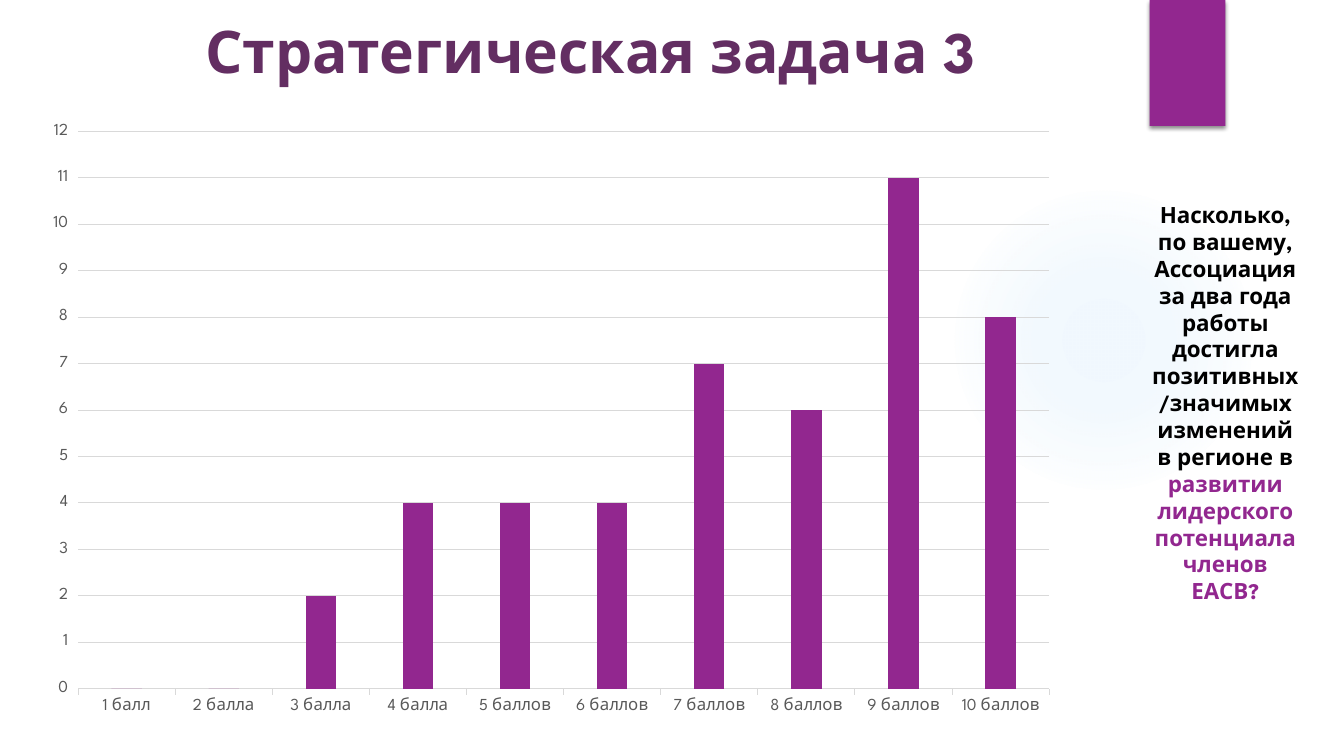
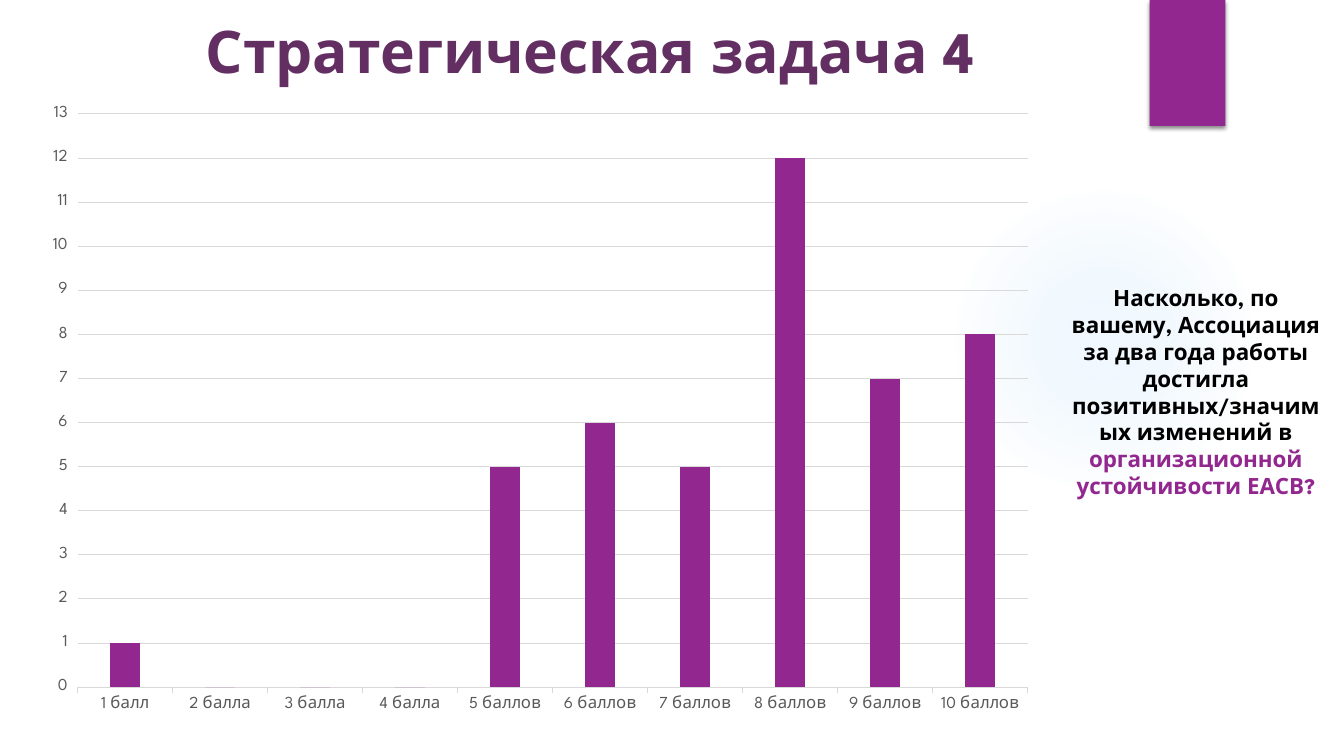
from dataclasses import dataclass

from lxml import etree
from pptx import Presentation
from pptx.chart.data import CategoryChartData
from pptx.dml.color import RGBColor
from pptx.enum.chart import XL_CHART_TYPE, XL_TICK_MARK
from pptx.enum.shapes import MSO_SHAPE
from pptx.enum.text import MSO_ANCHOR, MSO_AUTO_SIZE, PP_ALIGN
from pptx.oxml import parse_xml
from pptx.oxml.ns import nsdecls, qn
from pptx.util import Emu, Pt

COLUMNS = XL_CHART_TYPE.COLUMN_CLUSTERED
TICK_OUTSIDE = XL_TICK_MARK.OUTSIDE
TICK_NONE = XL_TICK_MARK.NONE
ELLIPSE = MSO_SHAPE.OVAL
RECTANGLE = MSO_SHAPE.RECTANGLE
MIDDLE = MSO_ANCHOR.MIDDLE
TOP = MSO_ANCHOR.TOP
FIT_TEXT = MSO_AUTO_SIZE.SHAPE_TO_FIT_TEXT
FIXED = MSO_AUTO_SIZE.NONE
CENTER = PP_ALIGN.CENTER

EMU_PER_PX = 9525


@dataclass(frozen=True)
class Theme:
    font: str = "League Spartan"
    accent: str = "92278F"
    title: str = "632E62"
    text: str = "000000"
    axis_text: str = "595959"
    grid: str = "D9D9D9"
    glow: str = "45A5ED"
    shadow: str = "000000"
    title_size: int = 42
    question_size: int = 16
    chart_size: int = 10
    axis_size: int = 12
    line_width: float = 0.75


@dataclass(frozen=True)
class Area:
    left: int
    top: int
    width: int
    height: int

    def emu(self) -> tuple[Emu, ...]:
        return tuple(
            Emu(length * EMU_PER_PX)
            for length in (self.left, self.top, self.width, self.height)
        )


@dataclass(frozen=True)
class Span:
    text: str
    color: str


@dataclass(frozen=True)
class SurveyPage:
    title: str
    question: str
    focus: str
    scores: tuple[int, ...]
    axis_maximum: int
    chart_area: Area
    question_area: Area


THEME = Theme()
PAGE_AREA = Area(0, 0, 1280, 720)
GLOW_AREA = Area(903, 176, 296, 296)
TAB_AREA = Area(1095, 0, 72, 120)
TITLE_AREA = Area(68, 7, 988, 82)
GLOW_STOPS = ((0, 7), (36, 6), (69, 0))

PAGES = (
    SurveyPage(
        title="Стратегическая задача 3",
        question="Насколько, по вашему, Ассоциация за два года работы достигла "
        "позитивных/значимых изменений в регионе в ",
        focus="развитии лидерского потенциала членов ЕАСВ?",
        scores=(0, 0, 2, 4, 4, 4, 7, 6, 11, 8),
        axis_maximum=12,
        chart_area=Area(31, 106, 988, 586),
        question_area=Area(1085, 187, 164, 397),
    ),
    SurveyPage(
        title="Стратегическая задача 4",
        question="Насколько, по вашему, Ассоциация за два года работы достигла "
        "позитивных/значимых изменений в ",
        focus="организационной устойчивости ЕАСВ?",
        scores=(1, 0, 0, 0, 5, 6, 5, 12, 7, 8),
        axis_maximum=13,
        chart_area=Area(31, 89, 967, 602),
        question_area=Area(1008, 266, 262, 217),
    ),
)


def rgb(color: str) -> RGBColor:
    return RGBColor.from_string(color)


def score_label(score: int) -> str:
    if score == 1:
        return "1 балл"
    return f"{score} балла" if score < 5 else f"{score} баллов"


def add_plain_shape(page, kind, area: Area, color: str):
    shape = page.shapes.add_shape(kind, *area.emu())
    shape.shadow.inherit = False
    shape.fill.solid()
    shape.fill.fore_color.rgb = rgb(color)
    shape.line.fill.background()
    return shape


def add_glow(page) -> None:
    shape = add_plain_shape(page, ELLIPSE, GLOW_AREA, THEME.glow)
    stops = "".join(
        f'<a:gs pos="{position * 1000}"><a:srgbClr val="{THEME.glow}">'
        f'<a:alpha val="{opacity * 1000}"/></a:srgbClr></a:gs>'
        for position, opacity in GLOW_STOPS
    )
    gradient = parse_xml(
        f'<a:gradFill {nsdecls("a")} rotWithShape="1"><a:gsLst>{stops}</a:gsLst>'
        '<a:path path="circle">'
        '<a:fillToRect l="50000" t="50000" r="50000" b="50000"/>'
        "</a:path></a:gradFill>"
    )
    properties = shape.element.spPr
    properties.replace(properties.find(qn("a:solidFill")), gradient)


def add_tab(page) -> None:
    shape = add_plain_shape(page, RECTANGLE, TAB_AREA, THEME.accent)
    effects = shape.element.spPr.find(qn("a:effectLst"))
    shadow = etree.SubElement(
        effects,
        qn("a:outerShdw"),
        blurRad=str(Pt(3)),
        dist=str(Pt(2)),
        dir="5400000",
        rotWithShape="0",
    )
    color = etree.SubElement(shadow, qn("a:srgbClr"), val=THEME.shadow)
    etree.SubElement(color, qn("a:alpha"), val="45000")


def add_text(page, area: Area, spans: tuple[Span, ...], size: int,
             anchor, auto_size) -> None:
    box = page.shapes.add_textbox(*area.emu())
    frame = box.text_frame
    frame.word_wrap = True
    frame.auto_size = auto_size
    frame.vertical_anchor = anchor
    paragraph = frame.paragraphs[0]
    paragraph.alignment = CENTER
    paragraph.font.name = THEME.font
    paragraph.font.size = Pt(size)
    paragraph.font.bold = True
    for span in spans:
        run = paragraph.add_run()
        run.text = span.text
        run.font.color.rgb = rgb(span.color)


def set_font(font, size: int, color: str) -> None:
    font.name = THEME.font
    font.size = Pt(size)
    font.color.rgb = rgb(color)


def set_line(line) -> None:
    line.color.rgb = rgb(THEME.grid)
    line.width = Pt(THEME.line_width)


def add_score_chart(page, survey: SurveyPage) -> None:
    data = CategoryChartData()
    data.categories = [
        score_label(score) for score in range(1, len(survey.scores) + 1)
    ]
    data.add_series("Series 1", survey.scores)
    chart = page.shapes.add_chart(COLUMNS, *survey.chart_area.emu(), data).chart
    chart.has_title = False
    chart.has_legend = False
    set_font(chart.font, THEME.chart_size, THEME.text)

    plot = chart.plots[0]
    plot.gap_width = 219
    plot.overlap = -27
    plot.vary_by_categories = False
    bars = plot.series[0].format
    bars.fill.solid()
    bars.fill.fore_color.rgb = rgb(THEME.accent)
    bars.line.fill.background()

    for axis in (chart.category_axis, chart.value_axis):
        axis.major_tick_mark = TICK_OUTSIDE
        axis.minor_tick_mark = TICK_NONE
        set_font(axis.tick_labels.font, THEME.axis_size, THEME.axis_text)
    set_line(chart.category_axis.format.line)

    value_axis = chart.value_axis
    value_axis.minimum_scale = 0
    value_axis.maximum_scale = survey.axis_maximum
    value_axis.major_unit = 1
    value_axis.format.line.fill.background()
    value_axis.has_major_gridlines = True
    set_line(value_axis.major_gridlines.format.line)


def add_survey_page(deck, survey: SurveyPage) -> None:
    page = deck.slides.add_slide(deck.slide_layouts[6])
    add_glow(page)
    add_tab(page)
    add_text(page, TITLE_AREA, (Span(survey.title, THEME.title),),
             THEME.title_size, MIDDLE, FIXED)
    add_score_chart(page, survey)
    question = (
        Span(survey.question, THEME.text),
        Span(survey.focus, THEME.accent),
    )
    add_text(page, survey.question_area, question,
             THEME.question_size, TOP, FIT_TEXT)


def main() -> None:
    deck = Presentation()
    _, _, deck.slide_width, deck.slide_height = PAGE_AREA.emu()
    for survey in PAGES:
        add_survey_page(deck, survey)
    deck.save("out.pptx")


if __name__ == "__main__":
    main()
